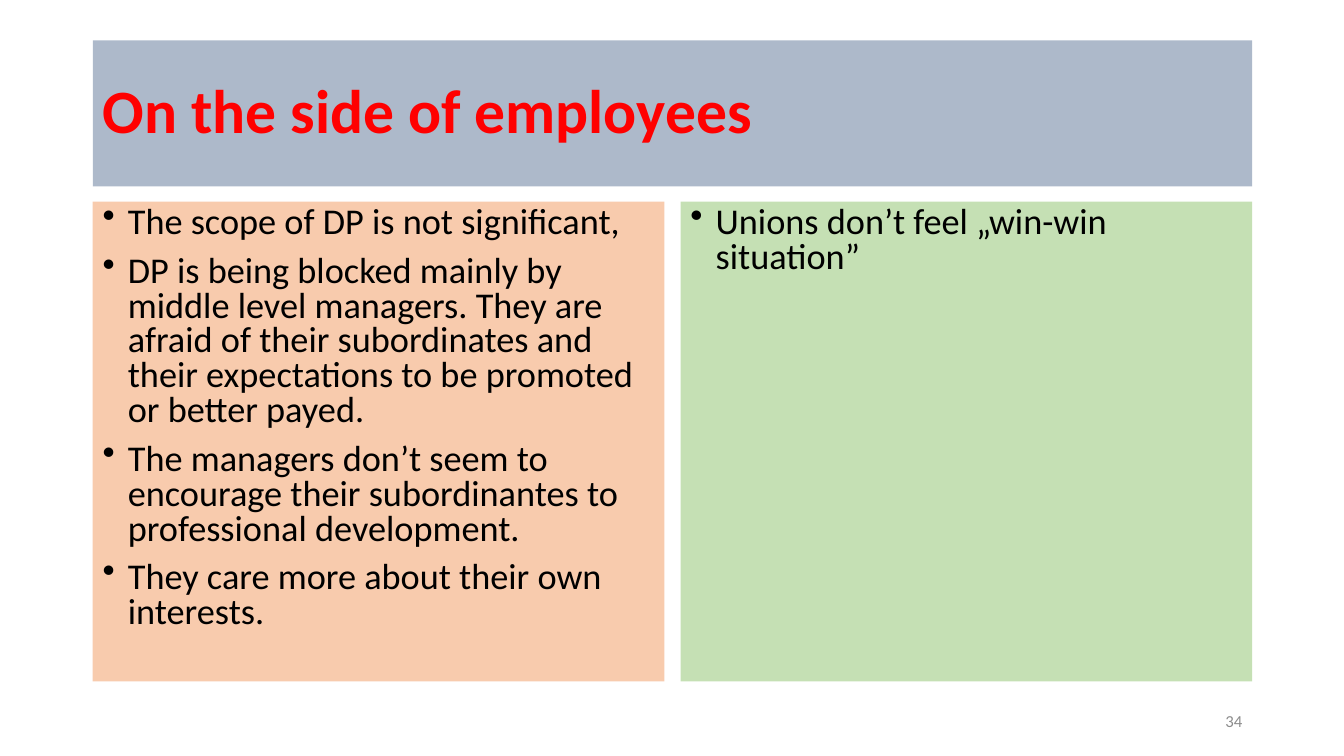
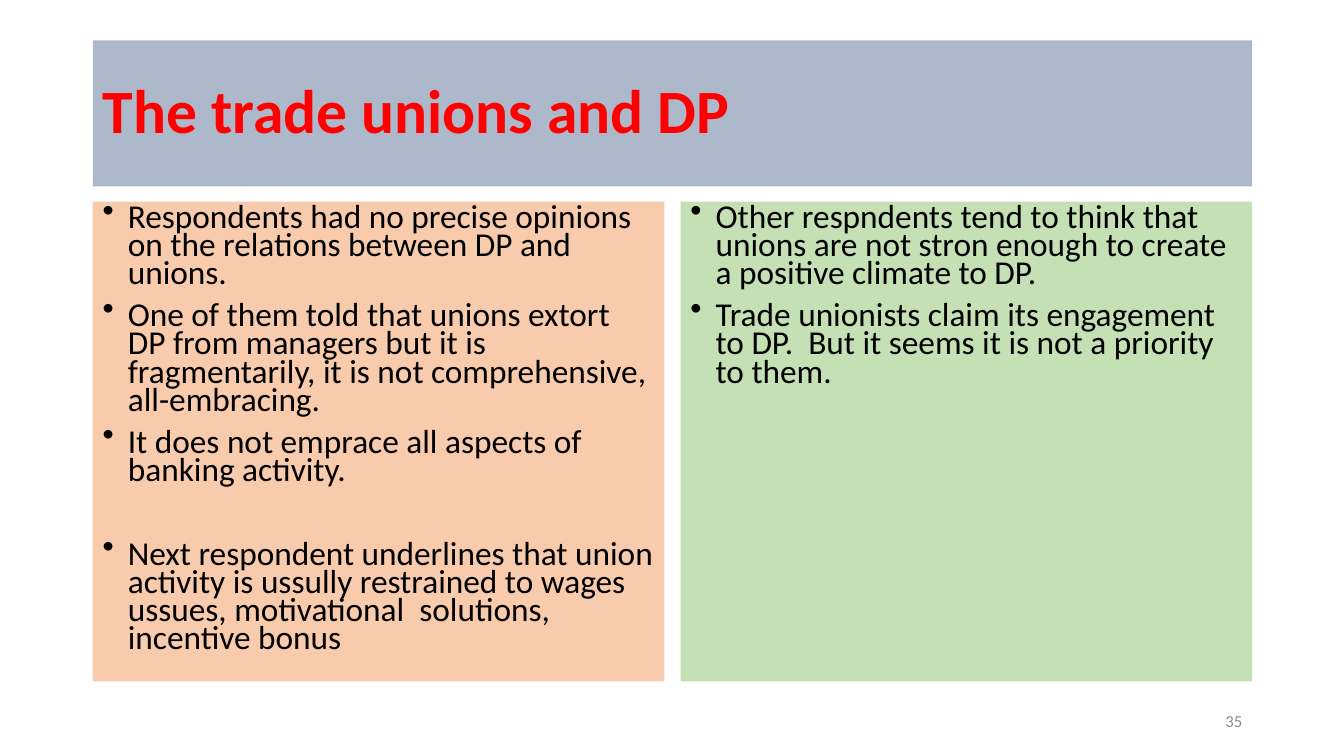
from dataclasses import dataclass

from pptx import Presentation
from pptx.dml.color import RGBColor
from pptx.enum import shapes, text
from pptx.oxml import xmlchemy
from pptx.util import Inches, Pt

COLORS = {
    "band": "ADB9CA",
    "title": "FF0000",
    "left": "F8CBAD",
    "right": "C5E0B4",
    "body": "000000",
    "number": "8C8C8C",
}
FONT = "Calibri"
MARGIN, CONTENT_W = 0.92, 11.5
PANEL_W, PANEL_TOP, PANEL_H = 5.67, 2, 4.76
BULLET_INDENT = Inches(0.25)


@dataclass(frozen=True)
class Bullet:
    text: str
    before: float = 10


@dataclass(frozen=True)
class TwoPanelSlide:
    title: str
    number: int
    size: float
    spacing: float
    left: tuple[Bullet, ...]
    right: tuple[Bullet, ...]


SLIDES = (
    TwoPanelSlide(
        "On the side of employees", 34, 25.9, 0.8,
        left=(
            Bullet("The scope of DP is not significant,"),
            Bullet("DP is being blocked mainly by middle level managers. They are afraid of "
                   "their subordinates and their expectations to be promoted or better payed."),
            Bullet("The managers don’t seem to encourage their subordinantes to "
                   "professional development."),
            Bullet("They care more about their own interests."),
        ),
        right=(Bullet("Unions don’t feel „win-win situation”"),),
    ),
    TwoPanelSlide(
        "The trade unions and DP", 35, 23.8, 0.7,
        left=(
            Bullet("Respondents had no precise opinions on the relations between DP and unions."),
            Bullet("One of them told that unions extort DP from managers but it is "
                   "fragmentarily, it is not comprehensive, all-embracing."),
            Bullet("It does not emprace all aspects of banking activity."),
            Bullet("Next respondent underlines that union activity is ussully restrained to "
                   "wages ussues, motivational  solutions, incentive bonus", before=40),
        ),
        right=(
            Bullet("Other respndents tend to think that unions are not stron enough to create "
                   "a positive climate to DP."),
            Bullet("Trade unionists claim its engagement to DP.  But it seems it is not a "
                   "priority to them."),
        ),
    ),
)


def rgb(name: str) -> RGBColor:
    return RGBColor.from_string(COLORS[name])


def fill(sp, color: str) -> None:
    sp.fill.solid()
    sp.fill.fore_color.rgb = rgb(color)


def style(p, size: float, color: str, align=text.PP_ALIGN.LEFT, bold: bool = False) -> None:
    p.alignment = align
    p.font.name, p.font.size, p.font.bold = FONT, Pt(size), bold
    p.font.color.rgb = rgb(color)


def add_bullet_mark(p) -> None:
    pPr = p._p.get_or_add_pPr()
    pPr.set("marL", str(BULLET_INDENT))
    pPr.set("indent", str(-BULLET_INDENT))
    mark = xmlchemy.OxmlElement("a:buChar")
    mark.set("char", "•")
    pPr.insert_element_before(mark, "a:tabLst", "a:defRPr", "a:extLst")


def format_title(sp, title: str) -> None:
    sp.left, sp.top = Inches(MARGIN), Inches(0.4)
    sp.width, sp.height = Inches(CONTENT_W), Inches(1.45)
    fill(sp, "band")
    tf = sp.text_frame
    tf.text = title
    tf.auto_size = text.MSO_AUTO_SIZE.NONE
    tf.vertical_anchor = text.MSO_ANCHOR.MIDDLE
    p = tf.paragraphs[0]
    p.line_spacing = 0.9
    style(p, 44, "title", bold=True)


def add_panel(s, left: float, color: str, bullets: tuple[Bullet, ...],
              size: float, spacing: float) -> None:
    sp = s.shapes.add_shape(shapes.MSO_SHAPE.RECTANGLE, Inches(left), Inches(PANEL_TOP),
                            Inches(PANEL_W), Inches(PANEL_H))
    sp.shadow.inherit = False
    sp.line.fill.background()
    fill(sp, color)
    tf = sp.text_frame
    tf.word_wrap = True
    tf.vertical_anchor = text.MSO_ANCHOR.TOP
    for i, bullet in enumerate(bullets):
        p = tf.add_paragraph() if i else tf.paragraphs[0]
        p.text = bullet.text
        p.line_spacing = spacing
        p.space_before = Pt(bullet.before)
        style(p, size, "body")
        add_bullet_mark(p)


def add_number(s, number: int) -> None:
    width = 3
    sp = s.shapes.add_textbox(Inches(MARGIN + CONTENT_W - width), Inches(6.95),
                              Inches(width), Inches(0.4))
    tf = sp.text_frame
    tf.word_wrap = True
    tf.vertical_anchor = text.MSO_ANCHOR.MIDDLE
    tf.text = str(number)
    style(tf.paragraphs[0], 12, "number", text.PP_ALIGN.RIGHT)


def add_slide(prs, content: TwoPanelSlide) -> None:
    s = prs.slides.add_slide(prs.slide_layouts.get_by_name("Title Only"))
    format_title(s.shapes.title, content.title)
    # Panels sit flush with both ends of the title band
    right_edge = MARGIN + CONTENT_W - PANEL_W
    add_panel(s, MARGIN, "left", content.left, content.size, content.spacing)
    add_panel(s, right_edge, "right", content.right, content.size, content.spacing)
    add_number(s, content.number)


def main() -> None:
    prs = Presentation()
    prs.slide_width, prs.slide_height = Inches(13.33), Inches(7.5)
    for content in SLIDES:
        add_slide(prs, content)
    prs.save("out.pptx")


if __name__ == "__main__":
    main()
